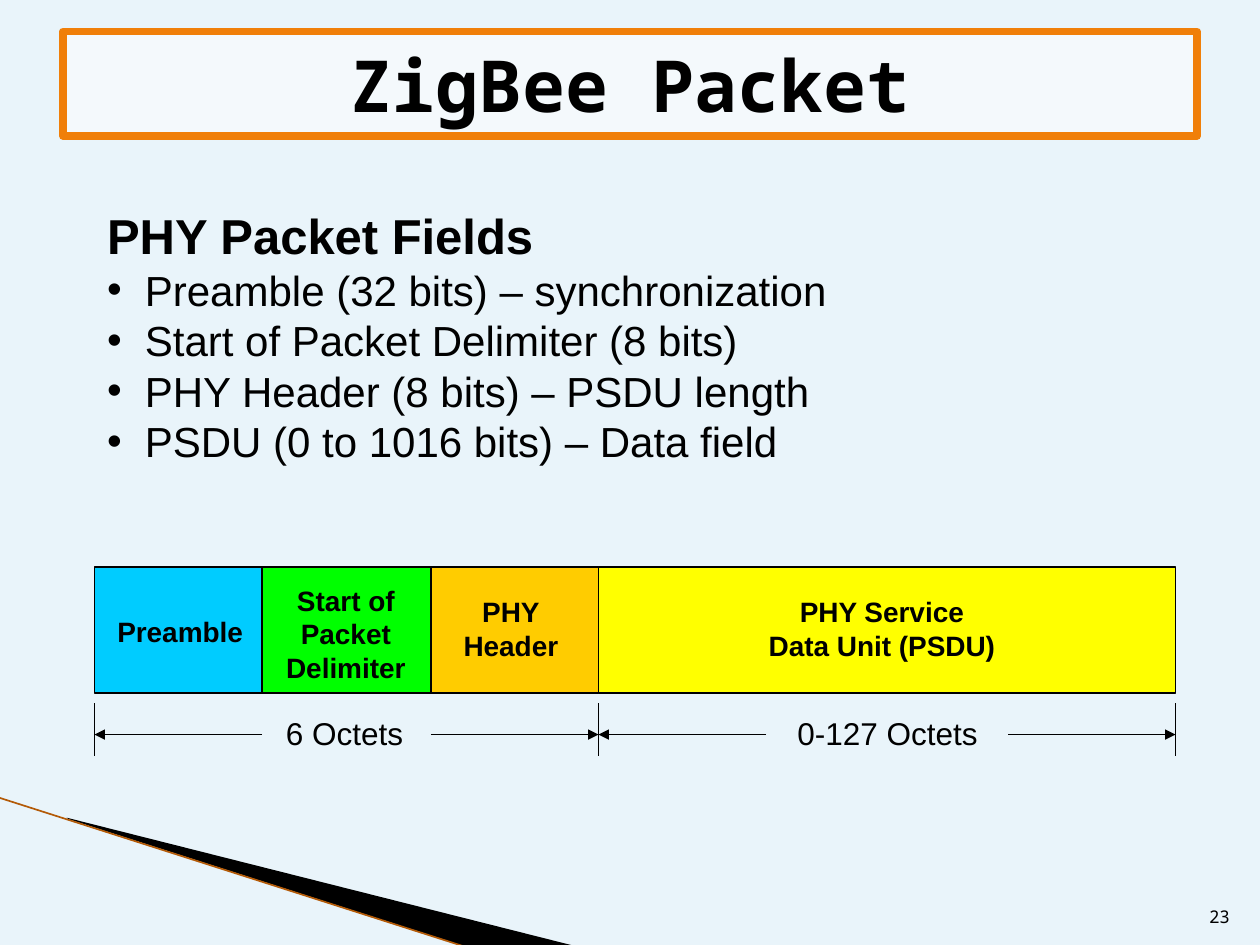
from dataclasses import dataclass

from lxml.etree import SubElement
from pptx import Presentation
from pptx.dml.color import RGBColor
from pptx.enum.shapes import MSO_CONNECTOR as Connector, MSO_SHAPE as Shape
from pptx.enum.text import MSO_ANCHOR as Anchor, MSO_AUTO_SIZE as AutoSize, PP_ALIGN as Align
from pptx.oxml.ns import qn
from pptx.util import Inches, Pt

BLACK = "000000"
MONO = "Noto Sans Mono"
FIELD_TOP, FIELD_HEIGHT = 4.5, 1.0
TICK_TOP, TICK_BOTTOM, ARROW_Y = 5.58, 6.0, 5.83
ARROW_LENGTH = 1.33


@dataclass
class Field:
    lines: list[str]
    left: float
    right: float
    color: str
    label_at: tuple[float, float, float, float]


@dataclass
class Span:
    text: str
    left: float
    right: float
    label_at: tuple[float, float, float, float]


FIELDS = [
    Field(["Preamble"], 0.75, 2.08, "00CCFF", (0.83, 4.83, 1.2, 0.37)),
    Field(["Start of", "Packet", "Delimiter"], 2.08, 3.42, "00FF00", (2.17, 4.58, 1.15, 0.9)),
    Field(["PHY", "Header"], 3.42, 4.75, "FFCC00", (3.58, 4.67, 0.95, 0.64)),
    Field(["PHY Service", "Data Unit (PSDU)"], 4.75, 9.33, "FFFF00", (6, 4.67, 2, 0.64)),
]
SPANS = [
    Span("6 Octets", 0.75, 4.75, (2.17, 5.62, 1.13, 0.4)),
    Span("0-127 Octets", 4.75, 9.33, (6.23, 5.62, 1.63, 0.4)),
]
BULLETS = [
    "Preamble (32 bits) – synchronization",
    "Start of Packet Delimiter (8 bits)",
    "PHY Header (8 bits) – PSDU length",
    "PSDU (0 to 1016 bits) – Data field",
]


def rgb(color: str) -> RGBColor:
    return RGBColor.from_string(color)


def paint(target, fill: str) -> None:
    target.fill.solid()
    target.fill.fore_color.rgb = rgb(fill)


def outline(target, color: str, width: float) -> None:
    target.line.color.rgb = rgb(color)
    target.line.width = Pt(width)


def place(shape, left: float, top: float, width: float, height: float) -> None:
    shape.left, shape.top = Inches(left), Inches(top)
    shape.width, shape.height = Inches(width), Inches(height)


def add_text(para, text: str, size: float, bold: bool = False, font: str = "Arial") -> None:
    run = para.add_run()
    run.text = text
    run.font.size, run.font.bold, run.font.name = Pt(size), bold, font
    run.font.color.rgb = rgb(BLACK)


def set_bullet(para, indent: float) -> None:
    """Hang the paragraph on a dot, or remove the bullet when indent is 0."""
    properties = para._p.get_or_add_pPr()
    properties.set("marL", str(Inches(indent)))
    properties.set("indent", str(-Inches(indent)))
    if indent:
        SubElement(properties, qn("a:buFont"), typeface="Arial")
        SubElement(properties, qn("a:buChar"), char="•")
    else:
        SubElement(properties, qn("a:buNone"))


def add_label(page, at: tuple[float, float, float, float], lines: list[str], size: float,
              bold: bool = False, font: str = "Arial", align=Align.CENTER):
    box = page.shapes.add_textbox(*map(Inches, at))
    frame = box.text_frame
    frame.word_wrap = False
    for index, line in enumerate(lines):
        para = frame.add_paragraph() if index else frame.paragraphs[0]
        para.alignment = align
        add_text(para, line, size, bold, font)
    return box


def add_line(page, x1: float, y1: float, x2: float, y2: float, color: str = BLACK,
             width: float = 1, arrow: bool = False) -> None:
    line = page.shapes.add_connector(Connector.STRAIGHT, *map(Inches, (x1, y1, x2, y2)))
    outline(line, color, width)
    if arrow:
        SubElement(line.line._get_or_add_ln(), qn("a:tailEnd"), type="triangle")
    SubElement(line._element.spPr, qn("a:effectLst"))


def add_corner(page) -> None:
    points = [(Inches(x), Inches(y)) for x, y in
              [(0.53, 6.49), (4.57, 7.51), (3.72, 7.52), (0.54, 6.5)]]
    builder = page.shapes.build_freeform(*points[0])
    builder.add_line_segments(points[1:], close=True)
    wedge = builder.convert_to_shape()
    wedge.shadow.inherit = False
    paint(wedge, BLACK)
    wedge.line.fill.background()
    add_line(page, -0.01, 6.33, 3.71, 7.52, "B35A07", 0.95)


def fill_title(title) -> None:
    place(title, 0.5, 0.25, 9, 0.83)
    paint(title, "F4F9FC")
    outline(title, "F07F09", 4.33)
    SubElement(title.line._get_or_add_ln(), qn("a:round"))
    frame = title.text_frame
    frame.auto_size, frame.vertical_anchor = AutoSize.NONE, Anchor.MIDDLE
    para = frame.paragraphs[0]
    para.alignment = Align.CENTER
    add_text(para, "ZigBee Packet", 41, True, MONO)


def fill_body(body) -> None:
    place(body, 0.75, 1.58, 8.17, 2.19)
    frame = body.text_frame
    frame.auto_size, frame.vertical_anchor = AutoSize.NONE, Anchor.TOP
    heading = frame.paragraphs[0]
    heading.space_before = Pt(0)
    set_bullet(heading, 0)
    add_text(heading, "PHY Packet Fields", 28, True)
    for text in BULLETS:
        para = frame.add_paragraph()
        para.space_before = Pt(0)
        set_bullet(para, 0.3)
        add_text(para, text, 24)


def add_field(page, field: Field) -> None:
    block = page.shapes.add_shape(Shape.RECTANGLE, *map(Inches, (
        field.left, FIELD_TOP, field.right - field.left, FIELD_HEIGHT)))
    block.shadow.inherit = False
    paint(block, field.color)
    outline(block, BLACK, 1)
    add_label(page, field.label_at, field.lines, 16, True)


def add_span(page, span: Span) -> None:
    add_label(page, span.label_at, [span.text], 18)
    for end, inward in ((span.left, ARROW_LENGTH), (span.right, -ARROW_LENGTH)):
        add_line(page, end + inward, ARROW_Y, end, ARROW_Y, arrow=True)


def main() -> None:
    deck = Presentation()
    deck.slide_width, deck.slide_height = Inches(10), Inches(7.5)
    page = deck.slides.add_slide(deck.slide_layouts[1])
    paint(page.background, "E9F4FA")
    add_corner(page)
    fill_title(page.shapes.title)
    fill_body(page.placeholders[1])
    number = add_label(page, (9.46, 7.01, 0.4, 0.4), ["23"], 10, font=MONO, align=Align.RIGHT)
    number.text_frame.word_wrap = True
    number.text_frame.vertical_anchor = Anchor.BOTTOM
    for field in FIELDS:
        add_field(page, field)
    for span in SPANS:
        add_span(page, span)
    for x in sorted({edge for span in SPANS for edge in (span.left, span.right)}):
        add_line(page, x, TICK_TOP, x, TICK_BOTTOM)
    deck.save("out.pptx")


if __name__ == "__main__":
    main()
